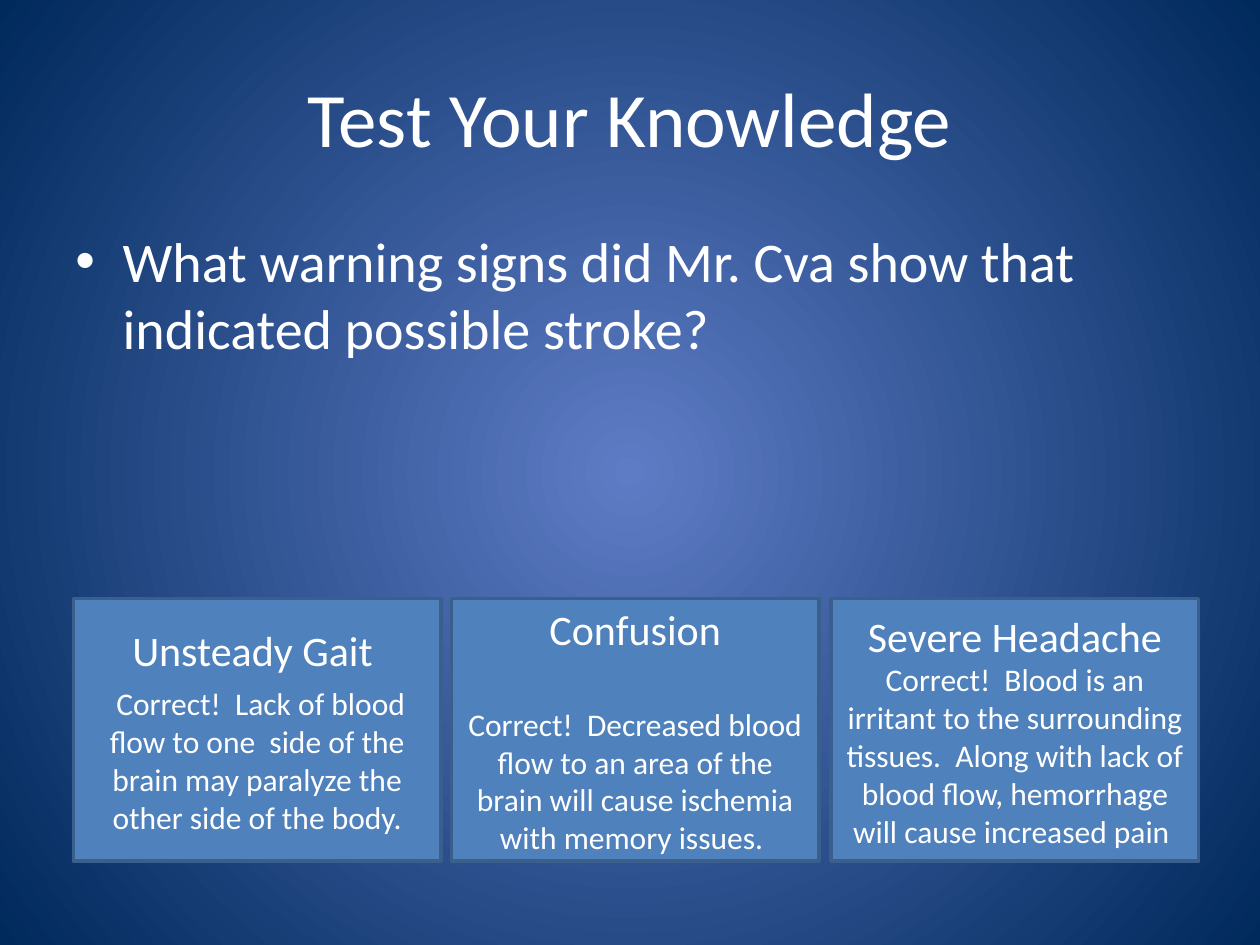
import lxml.etree
import pptx
import pptx.dml.color
import pptx.enum.shapes
import pptx.enum.text
import pptx.oxml
import pptx.oxml.ns
import pptx.util

Pt = pptx.util.Pt
RGBColor = pptx.dml.color.RGBColor
ALIGN = pptx.enum.text.PP_ALIGN
ANCHOR = pptx.enum.text.MSO_ANCHOR

WHITE = RGBColor(0xFF, 0xFF, 0xFF)
CARD_FILL = RGBColor(0x4F, 0x81, 0xBD)
CARD_LINE = RGBColor(0x3A, 0x5F, 0x8C)
GLOW = RGBColor(0x5E, 0x7C, 0xC5)
NAVY = RGBColor(0x00, 0x29, 0x5C)
FONT = "Calibri"

CARD_LEFTS = (42, 258, 475)
CARDS = (
    ("Unsteady Gait ",
     " Correct!  Lack of blood flow to one  side of the brain may paralyze the other side of the body.",
     5.5),
    ("Confusion",
     "Correct!  Decreased blood flow to an area of the brain will cause ischemia with memory issues. ",
     29),
    ("Severe Headache",
     "Correct!  Blood is an irritant to the surrounding tissues.  Along with lack of blood flow, "
     "hemorrhage will cause increased pain ",
     0),
)


def write(para, text, size, align=ALIGN.CENTER, before=0):
    para.alignment = align
    para.space_before = Pt(before)
    span = para.add_run()
    span.text = text
    span.font.name = FONT
    span.font.size = Pt(size)
    span.font.color.rgb = WHITE


def place(shape, box):
    shape.left, shape.top, shape.width, shape.height = (Pt(length) for length in box)


def paint_background(page):
    fill = page.background.fill
    fill.gradient()
    for stop, color, position in zip(fill.gradient_stops, (GLOW, NAVY), (0, 1)):
        stop.color.rgb = color
        stop.position = position
    gradient = page.background._cSld.find(".//" + pptx.oxml.ns.qn("a:gradFill"))
    linear = gradient.find(pptx.oxml.ns.qn("a:lin"))
    circle = pptx.oxml.parse_xml(
        f'<a:path {pptx.oxml.ns.nsdecls("a")} path="circle">'
        '<a:fillToRect l="50000" t="50000" r="50000" b="50000"/></a:path>')
    gradient.replace(linear, circle)


def add_title(page, box, text):
    title = page.shapes.title
    place(title, box)
    title.text_frame.vertical_anchor = ANCHOR.MIDDLE
    write(title.text_frame.paragraphs[0], text, 44)


def add_question(page, box, text):
    frame = page.shapes.add_textbox(*(Pt(length) for length in box)).text_frame
    frame.word_wrap = True
    para = frame.paragraphs[0]
    write(para, text, 32, align=ALIGN.LEFT)
    properties = para._p.get_or_add_pPr()
    properties.set("marL", str(Pt(27)))
    properties.set("indent", str(Pt(-27)))
    bullet_font = lxml.etree.SubElement(properties, pptx.oxml.ns.qn("a:buFont"))
    bullet_font.set("typeface", "Arial")
    bullet = lxml.etree.SubElement(properties, pptx.oxml.ns.qn("a:buChar"))
    bullet.set("char", "•")


def add_card(page, box, heading, answer, gap):
    card = page.shapes.add_shape(
        pptx.enum.shapes.MSO_SHAPE.RECTANGLE, *(Pt(length) for length in box))
    card.shadow.inherit = False
    card.fill.solid()
    card.fill.fore_color.rgb = CARD_FILL
    card.line.color.rgb = CARD_LINE
    card.line.width = Pt(2)
    frame = card.text_frame
    frame.word_wrap = True
    frame.vertical_anchor = ANCHOR.MIDDLE
    write(frame.paragraphs[0], heading, 24)
    write(frame.add_paragraph(), answer, 18, before=gap)


def main():
    deck = pptx.Presentation()
    deck.slide_width, deck.slide_height = Pt(720), Pt(540)
    page = deck.slides.add_slide(deck.slide_layouts.get_by_name("Title Only"))
    paint_background(page)
    add_title(page, (36, 21.6, 648, 90), "Test Your Knowledge")
    for left, (heading, answer, gap) in zip(CARD_LEFTS, CARDS):
        add_card(page, (left, 342, 210, 150), heading, answer, gap)
    add_question(page, (36, 126, 648, 222),
                 "What warning signs did Mr. Cva show that indicated possible stroke?")
    deck.save("out.pptx")


if __name__ == "__main__":
    main()
